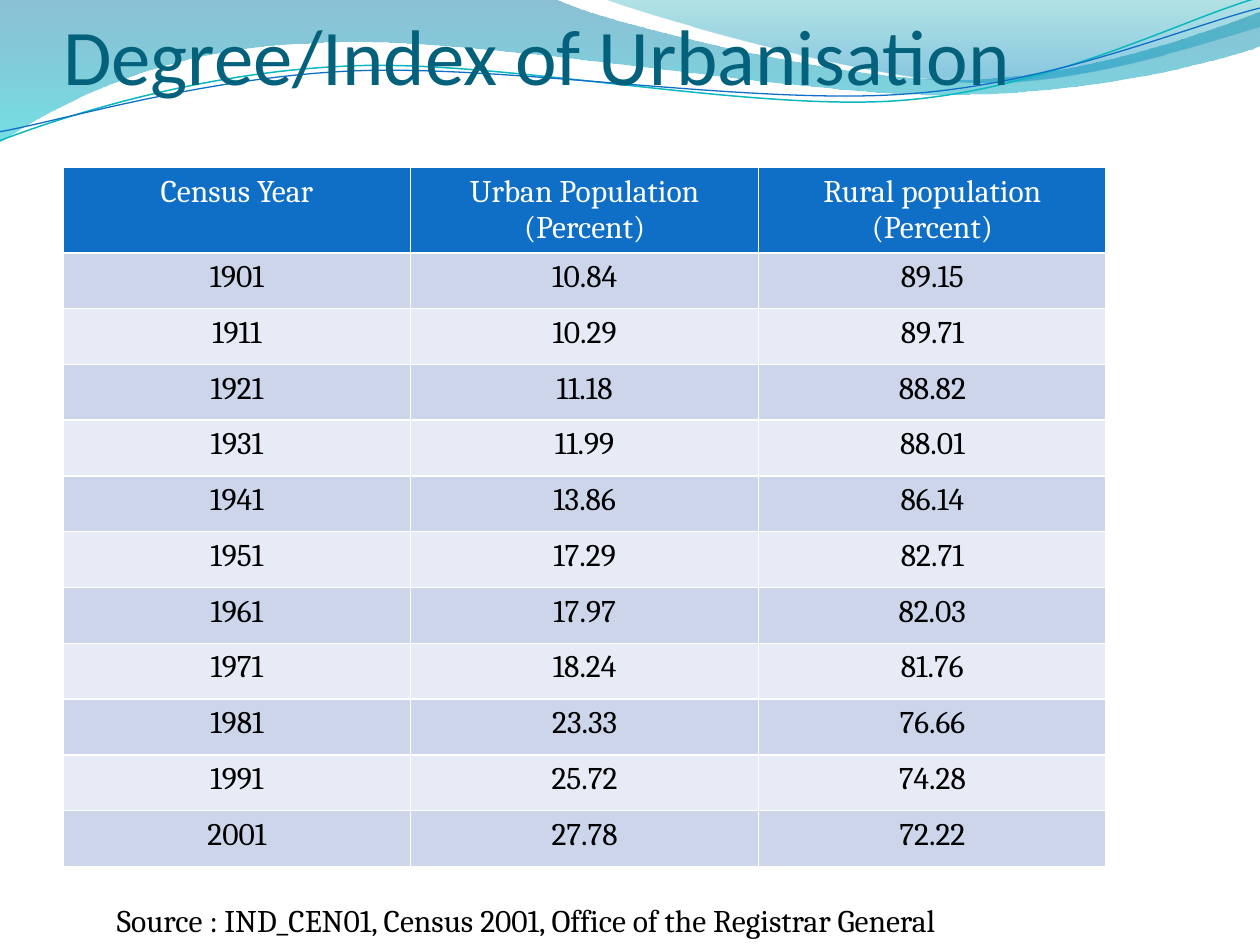
from dataclasses import dataclass

from lxml import etree
from pptx import Presentation
from pptx.dml.color import RGBColor
from pptx.enum.text import MSO_ANCHOR, PP_ALIGN
from pptx.oxml.ns import qn
from pptx.util import Inches, Pt

TOP = MSO_ANCHOR.TOP
LEFT, CENTER = PP_ALIGN.LEFT, PP_ALIGN.CENTER
TITLE_ONLY = 5


@dataclass(frozen=True)
class Theme:
    title_font: str = "Calibri"
    body_font: str = "Cambria"
    title_size: float = 45
    body_size: float = 18
    title: str = "04617B"
    header: str = "0F6FC6"
    bands: tuple = ("CCD5EA", "E7EBF5")
    white: str = "FFFFFF"
    black: str = "000000"
    teal_line: str = "0AB8BF"
    # Gradient stops: position, colour, opacity (percent)
    left_wave: tuple = ((0, "0074A1", 45), (100, "00C6CF", 55))
    right_wave: tuple = ((0, "00A1A9", 30), (80, "008BBF", 45))


THEME = Theme()


@dataclass(frozen=True)
class Wave:
    """Outline in inches: a segment is one point (line) or three (curve)."""
    start: tuple
    segments: tuple
    gradient: tuple = ()
    line: str = ""
    width: float = 0
    rotation: float = 0


WAVES = (
    Wave((0, 0), (
        (4.4, -0.01),
        (4.76, 0.17, 6.64, 0.63, 7.58, 0.63),
        (8.53, 0.63, 9.58, 0.26, 10, 0.09),
        (10.01, 0.36),
        (9.83, 0.44, 8.7, 0.76, 7.46, 0.75),
        (6.22, 0.75, 3.82, 0.28, 2.57, 0.34),
        (1.29, 0.36, 0.46, 0.83, -0.01, 1.13),
        (0, 0),
    ), gradient=THEME.left_wave),
    Wave((4.79, -0.01), (
        (5.09, 0.11, 6.82, 0.62, 7.69, 0.65),
        (8.56, 0.69, 9.61, 0.32, 10, 0.21),
        (10, 0),
        (4.79, -0.01),
    ), gradient=THEME.right_wave),
    Wave((-0.02, 0.88), (
        (0.47, 0.72, 1.58, 0.41, 2.78, 0.42),
        (3.96, 0.42, 5.91, 0.93, 7.12, 0.9),
        (8.32, 0.87, 9.4, 0.36, 10, 0.22),
    ), line=THEME.teal_line, width=0.85, rotation=357.3),
    Wave((-0.02, 0.81), (
        (0.46, 0.75, 1.64, 0.45, 2.83, 0.46),
        (4.03, 0.47, 5.96, 0.88, 7.16, 0.85),
        (8.35, 0.83, 9.42, 0.42, 10.02, 0.3),
    ), line=THEME.header, width=0.75, rotation=357.3),
)

ROWS = (
    ("Census Year", "Urban Population (Percent)", "Rural population (Percent)"),
    ("1901", "10.84", "89.15"),
    ("1911", "10.29", "89.71"),
    ("1921", "11.18", "88.82"),
    ("1931", "11.99", "88.01"),
    ("1941", "13.86", "86.14"),
    ("1951", "17.29", "82.71"),
    ("1961", "17.97", "82.03"),
    ("1971", "18.24", "81.76"),
    ("1981", "23.33", "76.66"),
    ("1991", "25.72", "74.28"),
    ("2001", "27.78", "72.22"),
)


def add_run(paragraph, text: str, font: str, size: float, color: str, align=LEFT) -> None:
    paragraph.alignment = align
    run = paragraph.add_run()
    run.text = text
    run.font.name = font
    run.font.size = Pt(size)
    run.font.color.rgb = RGBColor.from_string(color)


def curve_segments(shape, segments: tuple) -> None:
    """Join the line steps of each three-point segment into one cubic curve."""
    steps = iter(list(shape.element.iter(qn("a:lnTo"))))
    for segment in segments:
        step = next(steps)
        if len(segment) == 2:
            continue
        curve = etree.Element(qn("a:cubicBezTo"))
        step.addprevious(curve)
        for part in (step, next(steps), next(steps)):
            curve.append(part[0])
            part.getparent().remove(part)


def fill_gradient(shape, stops: tuple) -> None:
    shape.fill.gradient()
    shape.fill.gradient_angle = 270
    for stop, (position, color, _) in zip(shape.fill.gradient_stops, stops):
        stop.position = position / 100
        stop.color.rgb = RGBColor.from_string(color)
    colors = shape.element.spPr.iter(qn("a:srgbClr"))
    for color_element, (_, _, opacity) in zip(colors, stops):
        etree.SubElement(color_element, qn("a:alpha"), val=str(opacity * 1000))


def add_wave(slide, wave: Wave) -> None:
    points = [(Inches(segment[index]), Inches(segment[index + 1]))
              for segment in wave.segments for index in range(0, len(segment), 2)]
    builder = slide.shapes.build_freeform(Inches(wave.start[0]), Inches(wave.start[1]))
    builder.add_line_segments(points, close=bool(wave.gradient))
    shape = builder.convert_to_shape()
    curve_segments(shape, wave.segments)
    shape.rotation = wave.rotation
    shape.shadow.inherit = False
    if wave.gradient:
        fill_gradient(shape, wave.gradient)
        shape.line.fill.background()
    else:
        shape.fill.background()
        shape.line.color.rgb = RGBColor.from_string(wave.line)
        shape.line.width = Pt(wave.width)


def set_borders(cell) -> None:
    properties = cell._tc.get_or_add_tcPr()
    for index, tag in enumerate(("a:lnL", "a:lnR", "a:lnT", "a:lnB")):
        border = etree.Element(qn(tag), w=str(Pt(1)))
        fill = etree.SubElement(border, qn("a:solidFill"))
        etree.SubElement(fill, qn("a:srgbClr"), val=THEME.white)
        properties.insert(index, border)


def add_census_table(slide) -> None:
    frame = slide.shapes.add_table(
        len(ROWS), len(ROWS[0]), Inches(0.5), Inches(1.33), Inches(8.28), Inches(5.57))
    table = frame.table
    for column in table.columns:
        column.width = Inches(2.76)
    # The body rows share what the two-line header leaves
    body_height = Inches(4.87 / (len(ROWS) - 1))
    for row_index, values in enumerate(ROWS):
        is_header = row_index == 0
        table.rows[row_index].height = Inches(0.67) if is_header else body_height
        background = THEME.header if is_header else THEME.bands[(row_index - 1) % 2]
        color = THEME.white if is_header else THEME.black
        for column_index, value in enumerate(values):
            cell = table.cell(row_index, column_index)
            cell.fill.solid()
            cell.fill.fore_color.rgb = RGBColor.from_string(background)
            set_borders(cell)
            add_run(cell.text_frame.paragraphs[0], value,
                    THEME.body_font, THEME.body_size, color, CENTER)
    frame.height = Inches(5.57)


def add_title(slide) -> None:
    title = slide.shapes.title
    title.left, title.top, title.width, title.height = (
        Inches(0.5), Inches(0), Inches(9), Inches(1.25))
    frame = title.text_frame
    frame.margin_left = frame.margin_right = frame.margin_bottom = 0
    frame.margin_top = Inches(0.05)
    frame.vertical_anchor = TOP
    paragraph = frame.paragraphs[0]
    add_run(paragraph, "Degree/Index of Urbanisation",
            THEME.title_font, THEME.title_size, THEME.title)
    paragraph.add_line_break()
    # Bring the title in front of the waves
    slide.shapes.element.append(title.element)


def add_source(slide) -> None:
    frame = slide.shapes.add_textbox(
        Inches(0.83), Inches(7.1), Inches(7.83), Inches(0.4)).text_frame
    frame.word_wrap = True
    add_run(frame.paragraphs[0],
            "Source : IND_CEN01, Census 2001, Office of the Registrar General",
            THEME.body_font, THEME.body_size, THEME.black)


def main() -> None:
    presentation = Presentation()
    presentation.slide_width, presentation.slide_height = Inches(10), Inches(7.5)
    slide = presentation.slides.add_slide(presentation.slide_layouts[TITLE_ONLY])
    for wave in WAVES:
        add_wave(slide, wave)
    add_title(slide)
    add_census_table(slide)
    add_source(slide)
    presentation.save("out.pptx")


if __name__ == "__main__":
    main()
